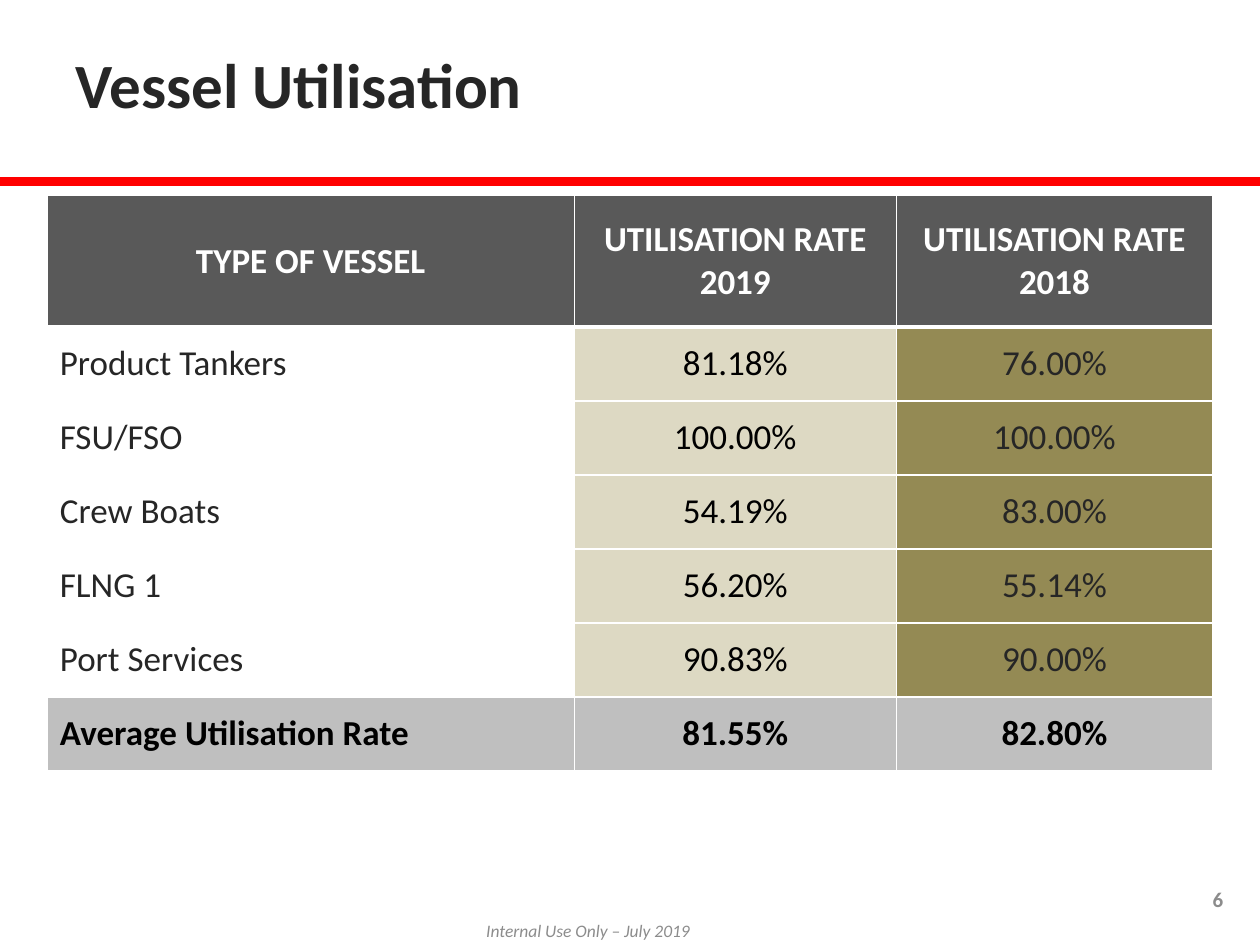
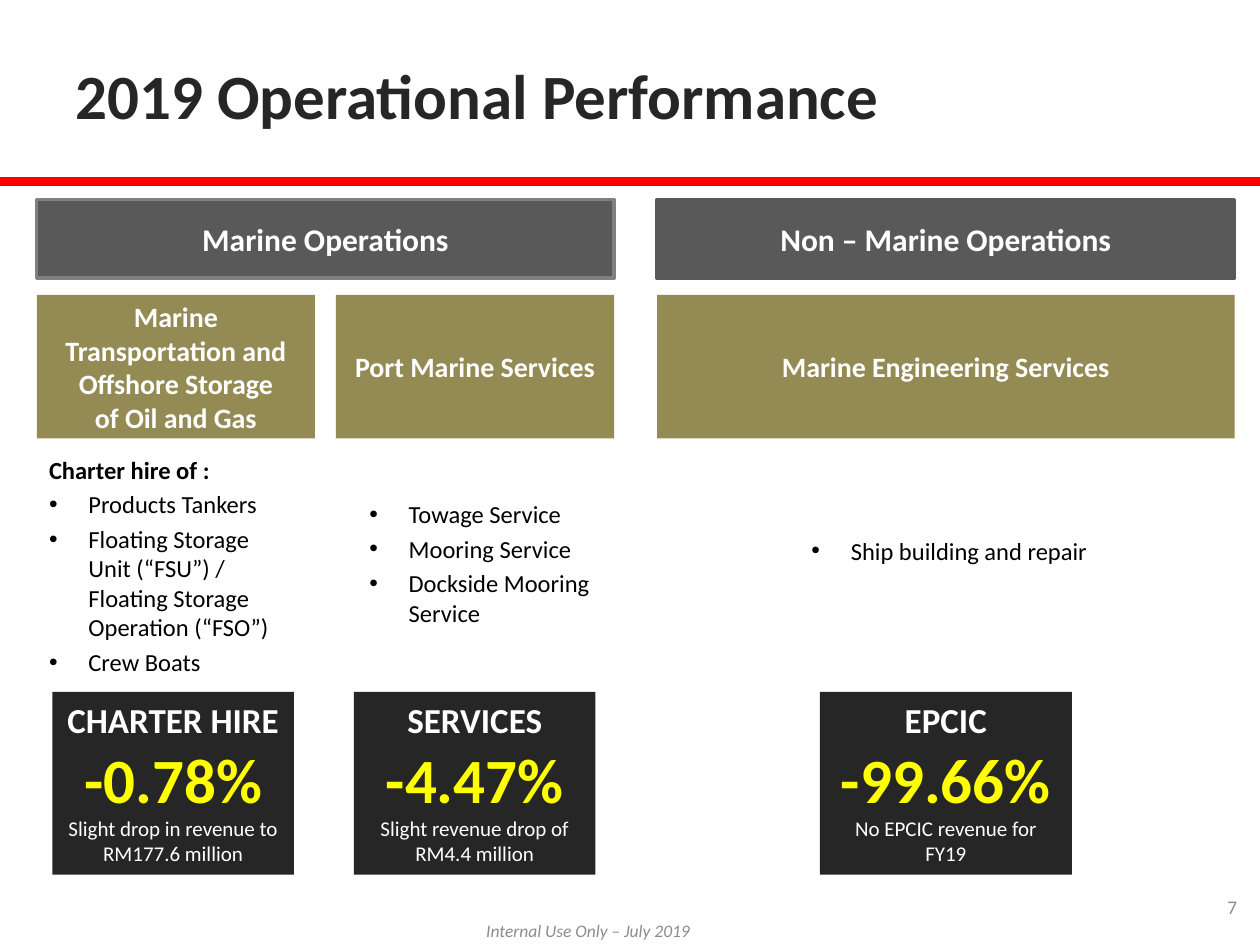
from lxml.etree import SubElement
from pptx import Presentation
from pptx.dml.color import RGBColor
from pptx.enum.shapes import MSO_SHAPE
from pptx.enum.text import MSO_ANCHOR, MSO_AUTO_SIZE, PP_ALIGN
from pptx.oxml.ns import qn
from pptx.util import Pt

FONT = "Calibri"
WHITE = RGBColor(0xFF, 0xFF, 0xFF)
BLACK = RGBColor(0, 0, 0)
RED = RGBColor(0xFF, 0, 0)
YELLOW = RGBColor(0xFF, 0xFF, 0)
INK = RGBColor(0x26, 0x26, 0x26)
SLATE = RGBColor(0x59, 0x59, 0x59)
GREY = RGBColor(0x80, 0x80, 0x80)
MUTED = RGBColor(0x8C, 0x8C, 0x8C)
SILVER = RGBColor(0xBF, 0xBF, 0xBF)
SAND = RGBColor(0xDD, 0xD9, 0xC3)
OLIVE = RGBColor(0x94, 0x8A, 0x54)
LEFT, MID, RIGHT = PP_ALIGN.LEFT, PP_ALIGN.CENTER, PP_ALIGN.RIGHT


def write(frame, lines, align=MID, anchor=MSO_ANCHOR.MIDDLE, listed=False):
    """Fill a frame with lines of (text, size, colour, bold); bold list lines get no bullet."""
    frame.word_wrap = True
    frame.vertical_anchor = anchor
    for i, (text, size, color, bold) in enumerate(lines):
        para = frame.paragraphs[0] if i == 0 else frame.add_paragraph()
        para.text = text
        para.alignment = align
        if listed:
            para.space_before, para.space_after = Pt(0), Pt(3)
            props = para._p.get_or_add_pPr()
            inset = 0 if bold else 22.5
            props.set("marL", str(Pt(inset)))
            props.set("indent", str(Pt(-inset)))
            if bold:
                SubElement(props, qn("a:buNone"))
            else:
                SubElement(props, qn("a:buFont"), typeface="Arial")
                SubElement(props, qn("a:buChar"), char="•")
        font = para.font
        font.name, font.size, font.bold = FONT, Pt(size), bold
        font.color.rgb = color


def box(slide, x, y, w, h, fill, line=None):
    """Add a plain rectangle and return its text frame."""
    shape = slide.shapes.add_shape(MSO_SHAPE.RECTANGLE, Pt(x), Pt(y), Pt(w), Pt(h))
    shape.shadow.inherit = False
    shape.fill.solid()
    shape.fill.fore_color.rgb = fill
    if line is None:
        shape.line.fill.background()
    else:
        shape.line.color.rgb = line
        shape.line.width = Pt(2)
    return shape.text_frame


deck = Presentation()
deck.slide_width, deck.slide_height = Pt(720), Pt(540)

# Shared parts: layout, title, red band, page number, footer
pages = [
    (5, "Vessel Utilisation", 22.3, ("6", 12, MUTED, True), (666, 499.3, 60), MID),
    (4, "2019 Operational Performance", 28.5, ("7", 11, MUTED, False),
     (546, 504, 168), RIGHT),
]
slides = []
for layout, name, top, number, (x, y, w), align in pages:
    slide = deck.slides.add_slide(deck.slide_layouts[layout])
    slides.append(slide)
    box(slide, 0, 102, 720, 3.4, RED, RED)
    title = slide.shapes.title
    title.left, title.top, title.width, title.height = Pt(36), Pt(top), Pt(630), Pt(51)
    write(title.text_frame, [(name, 36, INK, True)], LEFT)
    title.text_frame.auto_size = MSO_AUTO_SIZE.NONE
    page = slide.shapes.add_textbox(Pt(x), Pt(y), Pt(w), Pt(28.8))
    write(page.text_frame, [number], align)
    foot = slide.shapes.add_textbox(Pt(222), Pt(523.4), Pt(228), Pt(16.6))
    write(foot.text_frame, [("Internal Use Only – July 2019", 10, MUTED, False)])
    foot.text_frame.paragraphs[0].font.italic = True
rates, results = slides

# Vessel table
rows = [
    ("TYPE OF VESSEL", "UTILISATION RATE\n2019", "UTILISATION RATE\n2018"),
    ("Product Tankers", "81.18%", "76.00%"),
    ("FSU/FSO", "100.00%", "100.00%"),
    ("Crew Boats", "54.19%", "83.00%"),
    ("FLNG 1", "56.20%", "55.14%"),
    ("Port Services", "90.83%", "90.00%"),
    ("Average Utilisation Rate", "81.55%", "82.80%"),
]
last = len(rows) - 1
grid = rates.shapes.add_table(len(rows), 3, Pt(27), Pt(111.8), Pt(666), Pt(328.8)).table
for col, width in zip(grid.columns, (301.2, 184, 180.8)):
    col.width = Pt(width)
for r, row in enumerate(rows):
    grid.rows[r].height = Pt(42.3 if r else 75)
    for c, text in enumerate(row):
        cell = grid.cell(r, c)
        if r == 0:
            fill, color = SLATE, WHITE
        elif r == last:
            fill, color = SILVER, BLACK
        else:
            fill, color = ((WHITE, INK), (SAND, BLACK), (OLIVE, INK))[c]
        # Thick rule under the header, thin rules elsewhere
        props = cell._tc.get_or_add_tcPr()
        for side in "LRTB":
            thick = (r, side) in ((0, "B"), (1, "T"))
            edge = SubElement(props, qn("a:ln" + side), w=str(Pt(3 if thick else 1)))
            paint = SubElement(edge, qn("a:solidFill"))
            SubElement(paint, qn("a:srgbClr"), val=str(WHITE))
        cell.fill.solid()
        cell.fill.fore_color.rgb = fill
        cell.vertical_anchor = MSO_ANCHOR.MIDDLE
        bold = r in (0, last)
        write(cell.text_frame, [(part, 20, color, bold) for part in text.split("\n")],
              LEFT if r and c == 0 else MID)

# Operation headers
for x, text, line in ((21, "Marine Operations", GREY),
                      (375.5, "Non – Marine Operations", SLATE)):
    write(box(results, x, 114, 330, 45, SLATE, line), [(text, 18, WHITE, True)])

# Business units
units = [
    (21, 159, ["Marine Transportation and Offshore Storage", "of Oil and Gas"]),
    (192, 159, ["Port Marine Services"]),
    (375.5, 330, ["Marine Engineering Services"]),
]
for x, w, lines in units:
    write(box(results, x, 168.5, w, 82, OLIVE),
          [(text, 16, WHITE, True) for text in lines])

# Service lists
lists = [
    (1, 20.8, 256.2, 156, 135, "Charter hire of :",
     ["Products Tankers",
      "Floating Storage Unit (“FSU”) / Floating Storage Operation (“FSO”)",
      "Crew Boats"]),
    (2, 203.8, 281.6, 156, 81, None,
     ["Towage Service", "Mooring Service", "Dockside Mooring Service"]),
    (3, 456.5, 302.5, 252, 24.5, None, ["Ship building and repair"]),
]
for key, x, y, w, h, head, items in lists:
    body = results.placeholders[key]
    body.left, body.top, body.width, body.height = Pt(x), Pt(y), Pt(w), Pt(h)
    lines = [(head, 14, BLACK, True)] if head else []
    lines += [(item, 14, BLACK, False) for item in items]
    write(body.text_frame, lines, LEFT, MSO_ANCHOR.TOP, listed=True)
    body.text_frame.auto_size = MSO_AUTO_SIZE.NONE
spare = results.placeholders[4]._element
spare.getparent().remove(spare)

# Revenue changes
changes = [
    (30, 138, "CHARTER HIRE", "-0.78%", "Slight drop in revenue to RM177.6 million"),
    (202.3, 138, "SERVICES", "-4.47%", "Slight revenue drop of RM4.4 million"),
    (468.5, 144, "EPCIC", "-99.66%", "No EPCIC revenue for FY19"),
]
for x, w, name, change, note in changes:
    write(box(results, x, 395.4, w, 104.4, INK),
          [(name, 20, WHITE, True), (change, 36, YELLOW, True), (note, 12, WHITE, False)],
          anchor=MSO_ANCHOR.TOP)

deck.save("out.pptx")
